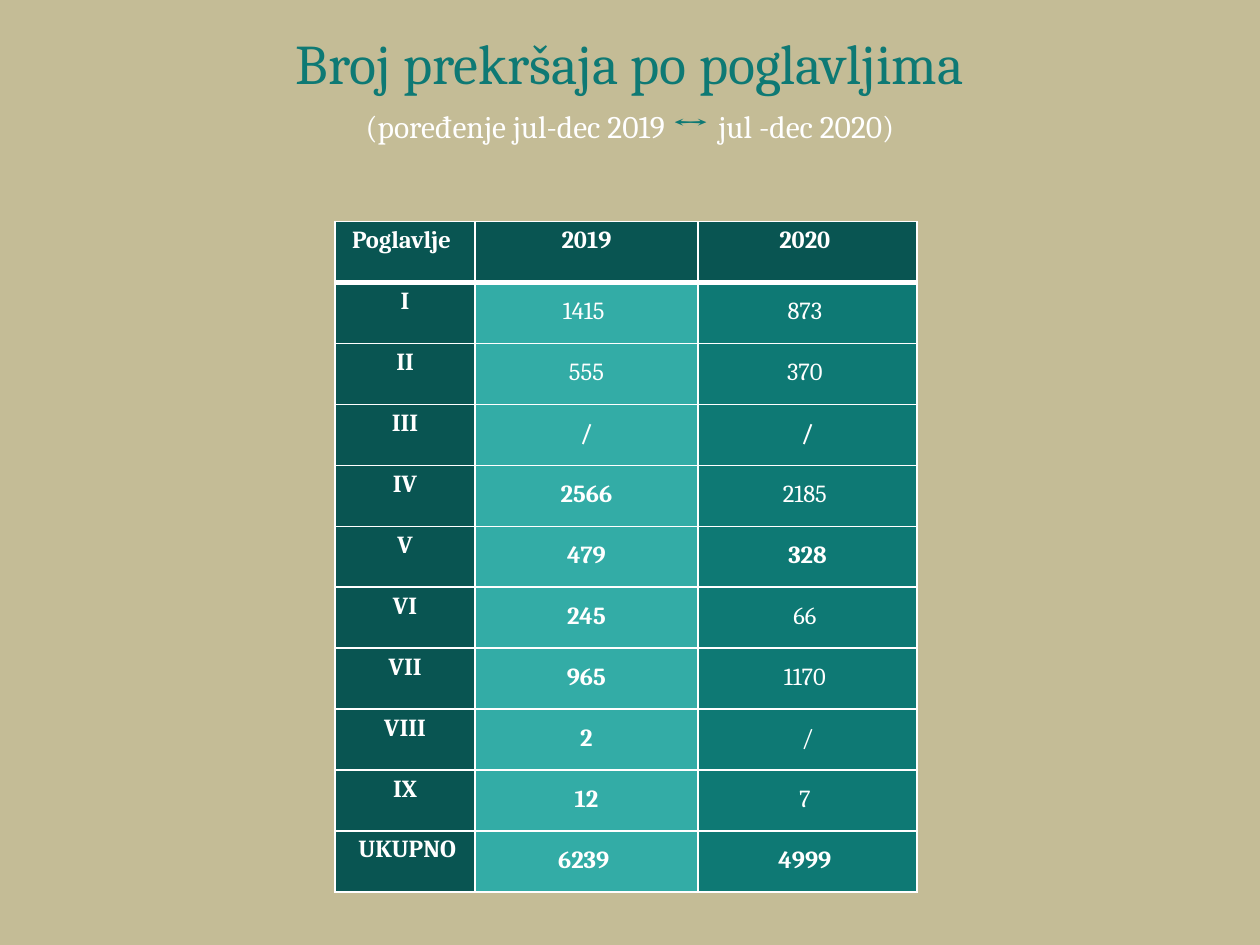
from lxml import etree
from pptx import Presentation
from pptx import util as u
from pptx.dml.color import RGBColor
from pptx.enum import text
from pptx.oxml import ns

SAND = RGBColor(0xC4, 0xBC, 0x96)
TEAL = RGBColor(0x0E, 0x79, 0x74)
DARK_TEAL = RGBColor(0x09, 0x55, 0x52)
LIGHT_TEAL = RGBColor(0x33, 0xAC, 0xA6)
WHITE = RGBColor(0xFF, 0xFF, 0xFF)

CENTER, RIGHT = text.PP_ALIGN.CENTER, text.PP_ALIGN.RIGHT
COLUMN_WIDTHS = (1.11, 1.77, 1.74)
COLUMN_FILLS = (DARK_TEAL, LIGHT_TEAL, TEAL)
HEADER = ("Poglavlje", "2019", "2020 ")
# Chapter, 2019, 2020, and whether each of the two counts is bold
CHAPTERS = (
    ("I", "1415 ", "873 ", False, False),
    ("II", "555", "370 ", False, False),
    ("III", "/", "/", True, True),
    ("IV", "2566", "2185 ", True, False),
    ("V", "479", "328", True, True),
    ("VI", "245", "66 ", True, False),
    ("VII", "965", "1170 ", True, False),
    ("VIII", "2", "/", True, False),
    ("IX", "12", "7 ", True, False),
    ("UKUPNO", "6239 ", "4999 ", True, True),
)
# Right margins that bring the right-aligned labels near the column centre
LABEL_MARGINS = {"Poglavlje": 0.19, "UKUPNO": 0.15}


class SlideBuilder:
    font_name = "Cambria"

    def __init__(self, presentation):
        self.slide = presentation.slides.add_slide(presentation.slide_layouts[5])

    def background(self, color):
        fill = self.slide.background.fill
        fill.solid()
        fill.fore_color.rgb = color

    def run(self, paragraph, content, size, color, bold=False):
        run = paragraph.add_run()
        run.text = content
        font_format = {"name": self.font_name, "size": u.Pt(size), "bold": bold}
        for name, value in font_format.items():
            setattr(run.font, name, value)
        run.font.color.rgb = color

    def title(self, left, top, width, height, lines):
        shape = self.slide.shapes.title
        box = {"left": left, "top": top, "width": width, "height": height}
        for name, value in box.items():
            setattr(shape, name, u.Inches(value))
        frame = shape.text_frame
        frame_format = {
            "margin_left": 0, "margin_right": 0, "margin_bottom": 0,
            "margin_top": u.Inches(0.01), "word_wrap": True,
            "vertical_anchor": text.MSO_ANCHOR.TOP,
            "auto_size": text.MSO_AUTO_SIZE.SHAPE_TO_FIT_TEXT,
        }
        for name, value in frame_format.items():
            setattr(frame, name, value)
        for index, (space, runs) in enumerate(lines):
            paragraph = frame.add_paragraph() if index else frame.paragraphs[0]
            paragraph.alignment = CENTER
            paragraph.space_before = u.Pt(space)
            for run in runs:
                self.run(paragraph, *run)

    def table(self, left, top, height, widths, row_count):
        frame = self.slide.shapes.add_table(
            row_count, len(widths), u.Inches(left), u.Inches(top),
            u.Inches(sum(widths)), u.Inches(height))
        for column, width in zip(frame.table.columns, widths):
            column.width = u.Inches(width)
        return frame.table

    def cell(self, cell, content, fill, bold, top, space, borders):
        label_margin = LABEL_MARGINS.get(content, 0)
        cell_format = {
            "margin_left": 0, "margin_bottom": 0,
            "margin_right": u.Inches(label_margin),
            "margin_top": u.Inches(top),
            "vertical_anchor": text.MSO_ANCHOR.TOP,
        }
        for name, value in cell_format.items():
            setattr(cell, name, value)
        paragraph = cell.text_frame.paragraphs[0]
        paragraph.alignment = RIGHT if label_margin else CENTER
        paragraph.space_before = u.Pt(space)
        self.run(paragraph, content, 14, WHITE, bold)
        self.borders(cell, borders)
        cell.fill.solid()
        cell.fill.fore_color.rgb = fill

    def borders(self, cell, widths):
        properties = cell._tc.get_or_add_tcPr()
        for side, width in widths.items():
            line = etree.SubElement(properties, ns.qn("a:ln" + side), w=str(u.Pt(width)))
            solid = etree.SubElement(line, ns.qn("a:solidFill"))
            etree.SubElement(solid, ns.qn("a:srgbClr"), val=str(WHITE))


def main():
    presentation = Presentation()
    presentation.slide_width = u.Inches(10)
    presentation.slide_height = u.Inches(7.5)
    builder = SlideBuilder(presentation)
    builder.background(SAND)

    # Title and period compared
    builder.title(2.2, 0.22, 5.6, 0.96, (
        (0.9, (("Broj prekršaja po poglavljima", 32, TEAL),)),
        (0.2, (("(poređenje jul-dec 2019 ", 18, WHITE),
               ("↔ ", 24, TEAL, True),
               ("jul -dec 2020)", 18, WHITE))),
    ))

    # Offences by chapter
    rows = [(HEADER, (True, True, True))]
    rows += [(chapter[:3], (True, *chapter[3:])) for chapter in CHAPTERS]
    table = builder.table(2.66, 1.76, 5.32, COLUMN_WIDTHS, len(rows))
    for row, (values, bolds) in enumerate(rows):
        borders = {"L": 1, "R": 1, "T": 3 if row == 1 else 1, "B": 1 if row else 3}
        for column, (value, bold) in enumerate(zip(values, bolds)):
            is_label = row == 0 or column == 0
            top, space = (0.04, 3.2) if is_label else (0.12, 8.6)
            fill = DARK_TEAL if is_label else COLUMN_FILLS[column]
            builder.cell(table.cell(row, column), value, fill, bold, top, space, borders)

    presentation.save("out.pptx")


if __name__ == "__main__":
    main()
